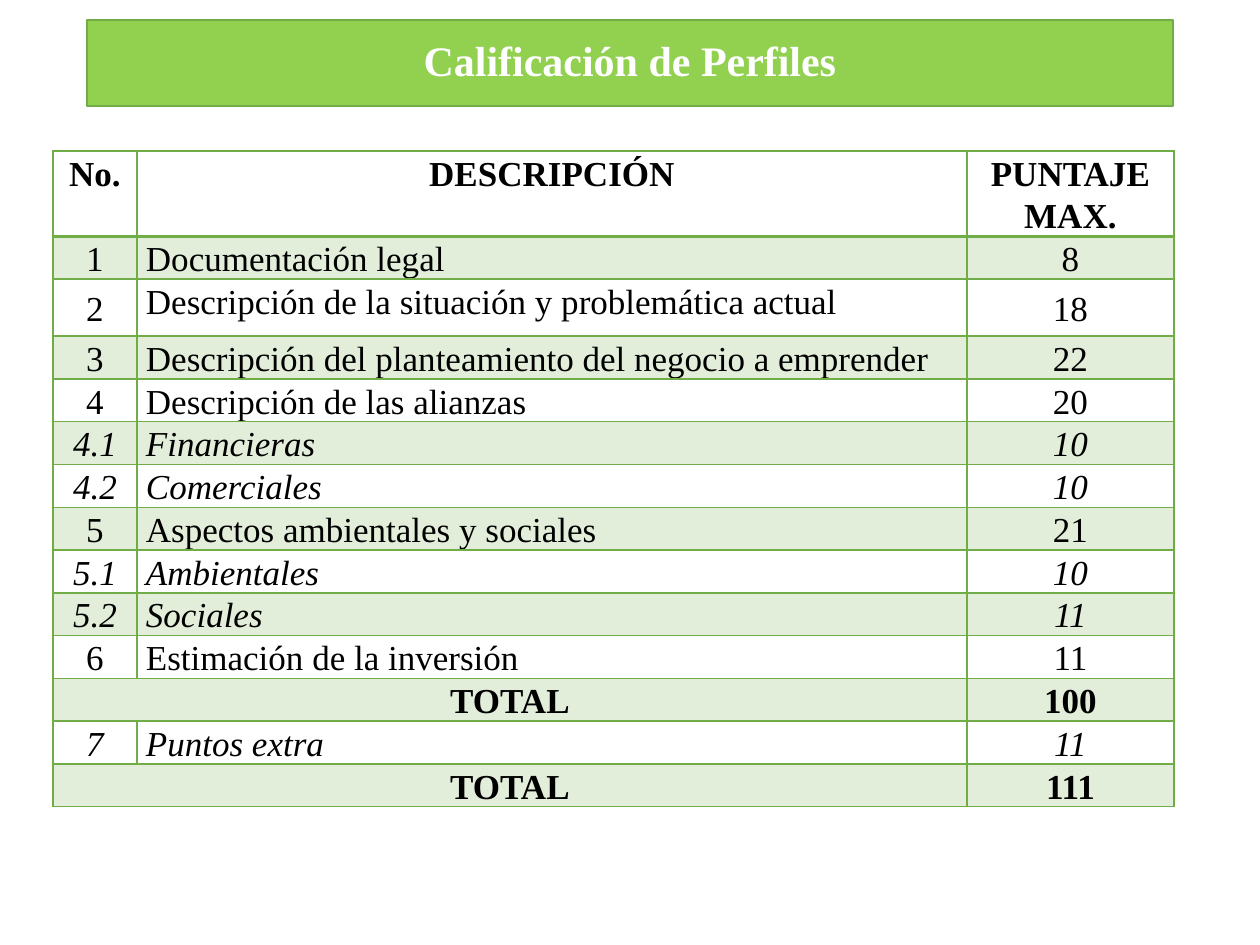
from lxml.etree import SubElement
from pptx import Presentation
from pptx.dml.color import RGBColor
from pptx.enum.text import MSO_ANCHOR, PP_ALIGN
from pptx.oxml.ns import qn
from pptx.util import Emu, Pt

SCALE = 914400 // 126
GREEN = "70AD47"
COLS = (84, 830, 207)
ROWS = [
    ("No.", "DESCRIPCIÓN", "PUNTAJE MAX."),
    ("1", "Documentación legal", "8"),
    ("2", "Descripción de la situación y problemática actual", "18"),
    ("3", "Descripción del planteamiento del negocio a emprender", "22"),
    ("4", "Descripción de las alianzas", "20"),
    ("4.1", "Financieras", "10"),
    ("4.2", "Comerciales", "10"),
    ("5", "Aspectos ambientales y sociales", "21"),
    ("5.1", "Ambientales", "10"),
    ("5.2", "Sociales", "11"),
    ("6", "Estimación de la inversión", "11"),
    ("TOTAL", None, "100"),
    ("7", "Puntos extra", "11"),
    ("TOTAL", None, "111"),
]
TALL = {0: 85, 2: 57}


def px(num):
    return Emu(num * SCALE)


def color(code):
    return RGBColor.from_string(code)


def write(frame, text, size=20, ink="000000", bold=False, italic=False,
          align=PP_ALIGN.CENTER, line=1.1, after=9):
    para = frame.paragraphs[0]
    para.alignment = align
    para.line_spacing = line
    para.space_after = Pt(after)
    run = para.add_run()
    run.text = text
    font = run.font
    font.name = "Times New Roman"
    font.size = Pt(size)
    font.bold = bold
    font.italic = italic
    font.color.rgb = color(ink)


def edge(cell, base):
    props = cell._tc.get_or_add_tcPr()
    for side, width in (("L", 1), ("R", 1), ("T", 1), ("B", base)):
        line = SubElement(props, qn("a:ln" + side), w=str(Pt(width)))
        fill = SubElement(line, qn("a:solidFill"))
        SubElement(fill, qn("a:srgbClr"), val=GREEN)


def shade(cell, band):
    if not band:
        cell.fill.background()
        return
    cell.fill.solid()
    cell.fill.fore_color.rgb = color(GREEN)
    tint = cell._tc.tcPr.find(qn("a:solidFill")).find(qn("a:srgbClr"))
    SubElement(tint, qn("a:alpha"), val="20000")


def add_title(slide, text):
    title = slide.shapes.title
    title.left, title.top, title.width, title.height = map(px, (87, 20, 1086, 86))
    title.fill.solid()
    title.fill.fore_color.rgb = color("92D050")
    title.line.color.rgb = color(GREEN)
    title.line.width = Pt(1)
    title.text_frame.vertical_anchor = MSO_ANCHOR.MIDDLE
    write(title.text_frame, text, size=24, ink="FFFFFF", bold=True, line=0.9, after=0)


def add_scores(slide):
    highs = [TALL.get(row, 42) for row in range(len(ROWS))]
    frame = slide.shapes.add_table(len(ROWS), len(COLS), px(53), px(151),
                                   px(sum(COLS)), px(sum(highs)))
    table = frame.table
    for col, width in enumerate(COLS):
        table.columns[col].width = px(width)
    for row, texts in enumerate(ROWS):
        table.rows[row].height = px(highs[row])
        total = texts[1] is None
        if total:
            table.cell(row, 0).merge(table.cell(row, 1))
        head = row == 0
        slant = "." in texts[0][:-1] or texts[0] == "7"
        for col, text in enumerate(texts):
            cell = table.cell(row, col)
            cell.margin_left = cell.margin_right = px(9)
            cell.margin_top = cell.margin_bottom = 0
            edge(cell, 2 if head else 1)
            shade(cell, row % 2)
            if row == 2 and col != 1:
                cell.vertical_anchor = MSO_ANCHOR.MIDDLE
            if text:
                left = col == 1 and not head
                write(cell.text_frame, text, bold=head or total, italic=slant,
                      align=PP_ALIGN.LEFT if left else PP_ALIGN.CENTER)


def main():
    deck = Presentation()
    deck.slide_width, deck.slide_height = px(1260), px(945)
    slide = deck.slides.add_slide(deck.slide_layouts[5])
    add_title(slide, "Calificación de Perfiles")
    add_scores(slide)
    deck.save("out.pptx")


if __name__ == "__main__":
    main()
